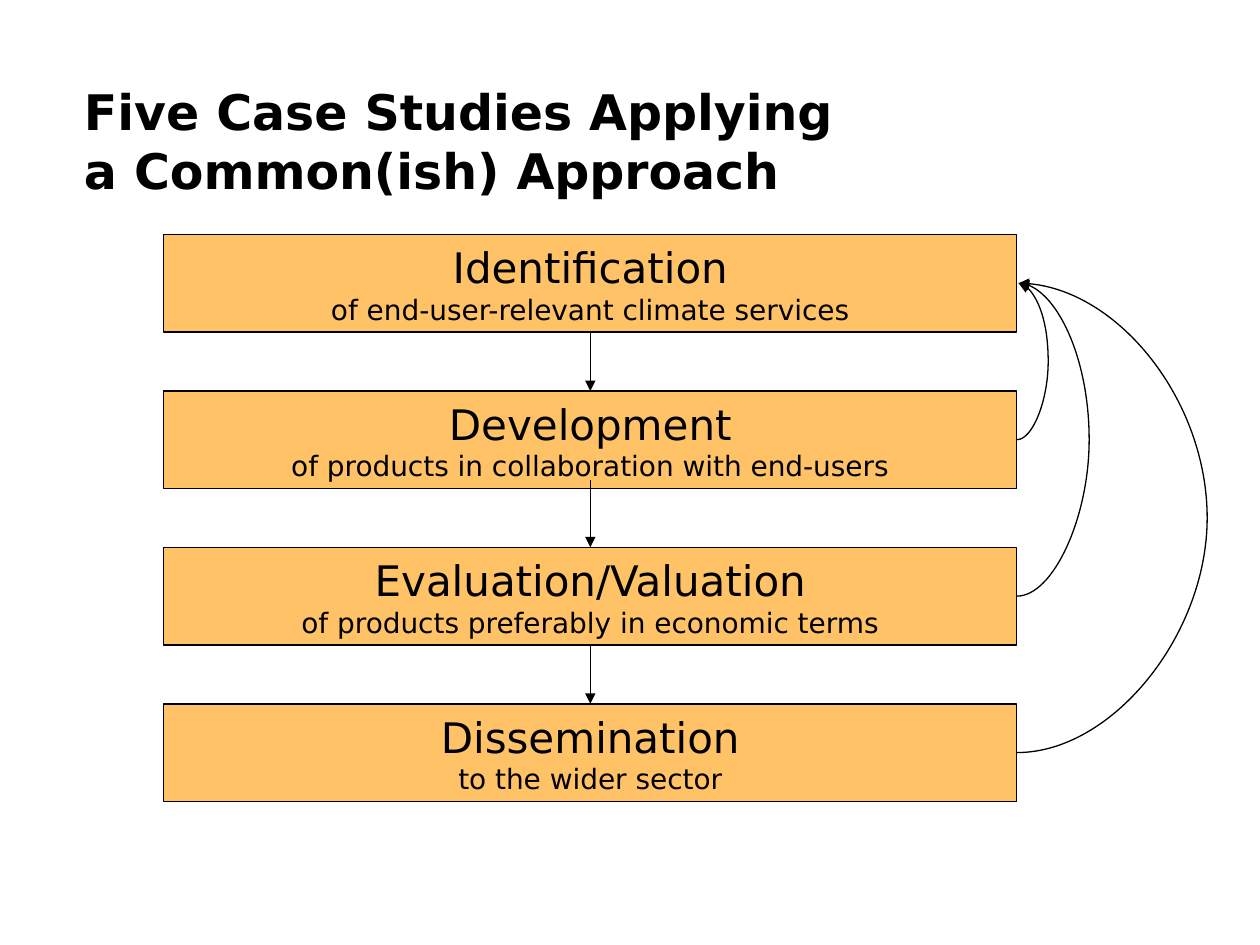
"""Build a slide with a four-step flow chart and feedback curves."""
from dataclasses import dataclass

import pptx
import pptx.dml.color
import pptx.enum.shapes
import pptx.enum.text
import pptx.oxml.ns
import pptx.util
from lxml import etree

Pt = pptx.util.Pt
RGBColor = pptx.dml.color.RGBColor
ANCHOR = pptx.enum.text.MSO_ANCHOR
ALIGN = pptx.enum.text.PP_ALIGN
CONNECTOR = pptx.enum.shapes.MSO_CONNECTOR
qn = pptx.oxml.ns.qn

BLACK = RGBColor(0x00, 0x00, 0x00)
ORANGE = RGBColor(0xFF, 0xC2, 0x66)
FONT = "DejaVu Sans"

LEFT, TOP, WIDTH, HEIGHT = 93.6, 134, 487.5, 55.8
PITCH = 89.4
RIGHT, CENTER = LEFT + WIDTH, LEFT + WIDTH / 2


@dataclass
class Step:
    heading: str
    detail: str
    bulge: float = 0
    overlap: float = 0


STEPS = [
    Step("Identification", "of end-user-relevant climate services"),
    Step("Development", "of products in collaboration with end-users", 18, 5),
    Step("Evaluation/Valuation", "of products preferably in economic terms", 41.62),
    Step("Dissemination", "to the wider sector", 109.58),
]


def add_run(p, text: str, size: float, bold: bool = False) -> None:
    r = p.add_run()
    r.text = text
    r.font.name = FONT
    r.font.size = Pt(size)
    r.font.bold = bold
    r.font.color.rgb = BLACK


def add_title(s, lines: list[str]) -> None:
    sp = s.shapes.title
    sp.left, sp.top, sp.width, sp.height = Pt(48), Pt(24), Pt(612), Pt(90)
    tf = sp.text_frame
    tf.margin_left = tf.margin_top = tf.margin_right = tf.margin_bottom = 0
    tf.vertical_anchor = ANCHOR.BOTTOM
    tf.auto_size = pptx.enum.text.MSO_AUTO_SIZE.NONE
    p = tf.paragraphs[0]
    p.alignment = ALIGN.LEFT
    for i, line in enumerate(lines):
        if i:
            p.add_line_break()
        add_run(p, line, 28, True)


def add_box(s, step: Step, top: float) -> None:
    sp = s.shapes.add_shape(pptx.enum.shapes.MSO_SHAPE.RECTANGLE,
                            Pt(LEFT), Pt(top), Pt(WIDTH), Pt(HEIGHT))
    sp.shadow.inherit = False
    sp.fill.solid()
    sp.fill.fore_color.rgb = ORANGE
    sp.line.color.rgb = BLACK
    sp.line.width = Pt(0.75)
    tf = sp.text_frame
    tf.word_wrap = True
    tf.vertical_anchor = ANCHOR.BOTTOM
    p = tf.paragraphs[0]
    p.alignment = ALIGN.CENTER
    add_run(p, step.heading, 24)
    p.add_line_break()
    add_run(p, step.detail, 16)


def add_arrow(s, kind, x1: float, y1: float, x2: float, y2: float):
    sp = s.shapes.add_connector(kind, Pt(x1), Pt(y1), Pt(x2), Pt(y2))
    sp.line.color.rgb = BLACK
    sp.line.width = Pt(0.75)
    ln = sp.line._get_or_add_ln()
    etree.SubElement(ln, qn("a:tailEnd"), type="triangle")
    etree.SubElement(sp._element.spPr, qn("a:effectLst"))
    return sp


def add_feedback(s, y: float, bulge: float) -> None:
    sp = add_arrow(s, CONNECTOR.CURVE, RIGHT, y, RIGHT + 1, TOP + HEIGHT / 2)
    geom = sp._element.spPr.find(qn("a:prstGeom"))
    av = geom.find(qn("a:avLst"))
    if av is None:
        av = etree.SubElement(geom, qn("a:avLst"))
    etree.SubElement(av, qn("a:gd"), name="adj1", fmla=f"val {round(bulge * 100000)}")


def main() -> None:
    prs = pptx.Presentation()
    prs.slide_width, prs.slide_height = Pt(720), Pt(540)
    s = prs.slides.add_slide(prs.slide_layouts[5])
    add_title(s, ["Five Case Studies Applying ", "a Common(ish) Approach"])
    tops = [TOP + i * PITCH for i in range(len(STEPS))]
    for step, top in zip(STEPS, tops):
        add_box(s, step, top)
    for step, top, following in zip(STEPS, tops, tops[1:]):
        add_arrow(s, CONNECTOR.STRAIGHT, CENTER, top + HEIGHT - step.overlap,
                  CENTER, following)
    for step, top in zip(STEPS[1:], tops[1:]):
        add_feedback(s, top + HEIGHT / 2, step.bulge)
    prs.save("out.pptx")


if __name__ == "__main__":
    main()
